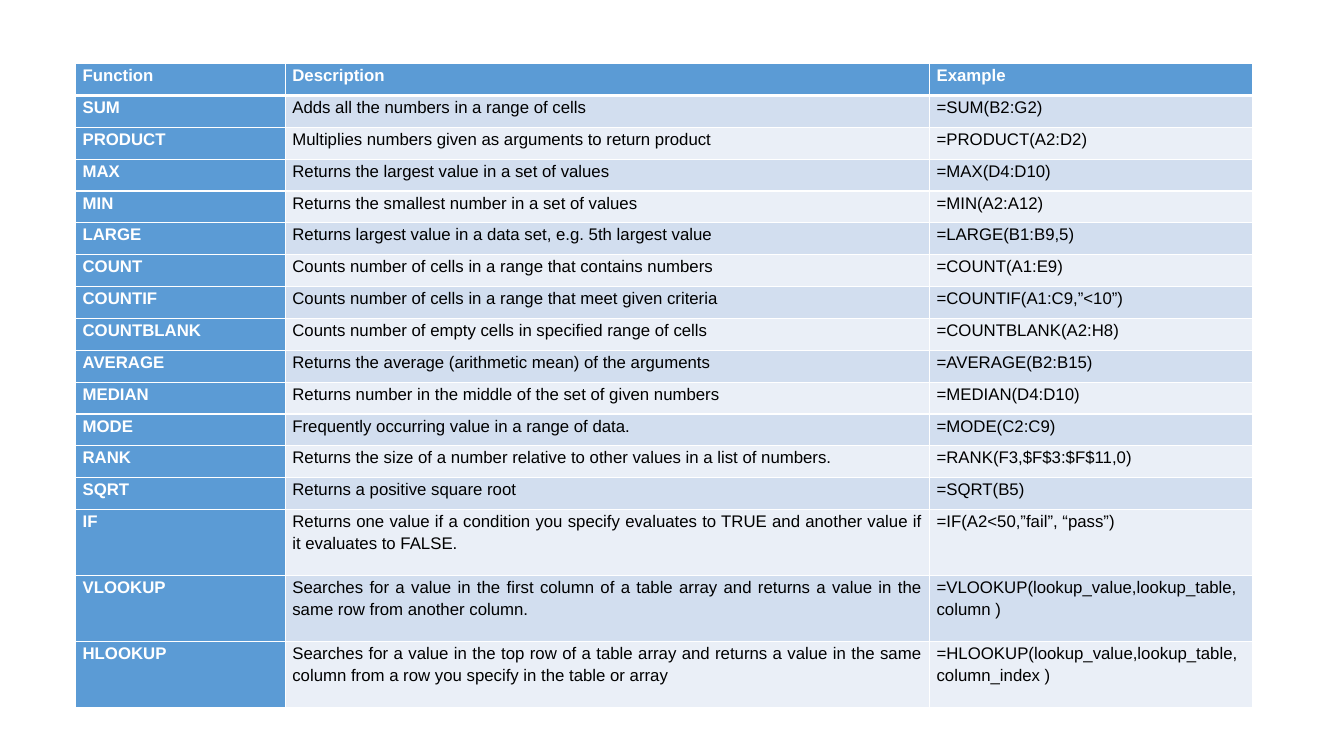
from lxml.etree import SubElement as Sub
from pptx import Presentation
from pptx.dml.color import RGBColor as Color
from pptx.enum.text import PP_ALIGN as Align
from pptx.oxml.ns import qn
from pptx.util import Inches, Pt

WIDE, HIGH = 13.33, 7.5
BLUE, WHITE, BLACK = "5B9BD5", "FFFFFF", "000000"
BANDS = ("EAEFF7", "D2DEEF")
COLS = (2.08, 6.39, 3.2)  # column shares
TALL = 2.07  # height of a two-line row, in single rows
INSET = {"margin_left": Inches(0.07), "margin_right": Inches(0.07),
         "margin_top": 0, "margin_bottom": 0}
PARA = {"alignment": Align.JUSTIFY, "line_spacing": 1.15}
FONT = {"name": "Arial", "size": Pt(12)}

HEAD = ("Function", "Description", "Example")
SHORT = [
    ("SUM", "Adds all the numbers in a range of cells", "=SUM(B2:G2)"),
    ("PRODUCT", "Multiplies numbers given as arguments to return product",
     "=PRODUCT(A2:D2)"),
    ("MAX", "Returns the largest value in a set of values", "=MAX(D4:D10)"),
    ("MIN", "Returns the smallest number in a set of values", "=MIN(A2:A12)"),
    ("LARGE", "Returns largest value in a data set, e.g. 5th largest value",
     "=LARGE(B1:B9,5)"),
    ("COUNT", "Counts number of cells in a range that contains numbers",
     "=COUNT(A1:E9)"),
    ("COUNTIF", "Counts number of cells in a range that meet given criteria",
     "=COUNTIF(A1:C9,”<10”)"),
    ("COUNTBLANK", "Counts number of empty cells in specified range of cells",
     "=COUNTBLANK(A2:H8)"),
    ("AVERAGE", "Returns the average (arithmetic mean) of the arguments",
     "=AVERAGE(B2:B15)"),
    ("MEDIAN", "Returns number in the middle of the set of given numbers",
     "=MEDIAN(D4:D10)"),
    ("MODE", "Frequently occurring value in a range of data.", "=MODE(C2:C9)"),
    ("RANK", "Returns the size of a number relative to other values in a list "
     "of numbers.", "=RANK(F3,$F$3:$F$11,0)"),
    ("SQRT", "Returns a positive square root", "=SQRT(B5)"),
]
LONG = [
    ("IF", "Returns one value if a condition you specify evaluates to TRUE "
     "and another value if it evaluates to FALSE.",
     "=IF(A2<50,”fail”, “pass”)"),
    ("VLOOKUP", "Searches for a value in the first column of a table array "
     "and returns a value in the same row from another column.",
     "=VLOOKUP(lookup_value,lookup_table, column )"),
    ("HLOOKUP", "Searches for a value in the top row of a table array and "
     "returns a value in the same column from a row you specify in the table "
     "or array", "=HLOOKUP(lookup_value,lookup_table, column_index )"),
]


def paint(fill, tone):
    fill.solid()
    fill.fore_color.rgb = Color.from_string(tone)


def style(item, look):
    for key, value in look.items():
        setattr(item, key, value)


def edge(cell, widths):
    """Draw white borders; widths maps a side to points."""
    props = cell._tc.get_or_add_tcPr()
    for side, width in widths.items():
        line = Sub(props, qn("a:ln" + side), w=str(Pt(width)))
        Sub(Sub(line, qn("a:solidFill")), qn("a:srgbClr"), val=WHITE)


def write(cell, text, tone, ink, bold):
    style(cell, INSET)
    paint(cell.fill, tone)
    para = cell.text_frame.paragraphs[0]
    style(para, PARA)
    run = para.add_run()
    run.text = text
    style(run.font, FONT | {"bold": bold})
    run.font.color.rgb = Color.from_string(ink)


def grid(slide, left, top, width, height):
    """Fill the box with the function table."""
    rows = [HEAD, *SHORT, *LONG]
    parts = [1] * (1 + len(SHORT)) + [TALL] * len(LONG)
    table = slide.shapes.add_table(
        len(rows), len(COLS), Inches(left), Inches(top),
        Inches(width), Inches(height)).table

    # Column and row sizes
    for col, share in zip(table.columns, COLS):
        col.width = Inches(width * share / sum(COLS))
    for row, part in zip(table.rows, parts):
        row.height = Inches(height * part / sum(parts))

    # Cells: blue header and first column, banded body
    for r, texts in enumerate(rows):
        for c, text in enumerate(texts):
            cell = table.cell(r, c)
            lead = r == 0 or c == 0
            edge(cell, {"L": 1, "R": 1, "T": 3 if r == 1 else 1,
                        "B": 3 if r == 0 else 1})
            write(cell, text, BLUE if lead else BANDS[r % 2],
                  WHITE if lead else BLACK, lead)


def main():
    deck = Presentation()
    deck.slide_width, deck.slide_height = Inches(WIDE), Inches(HIGH)
    slide = deck.slides.add_slide(deck.slide_layouts[6])
    paint(slide.background.fill, WHITE)
    grid(slide, 0.75, 0.63, sum(COLS), 6.39)
    deck.save("out.pptx")


if __name__ == "__main__":
    main()
